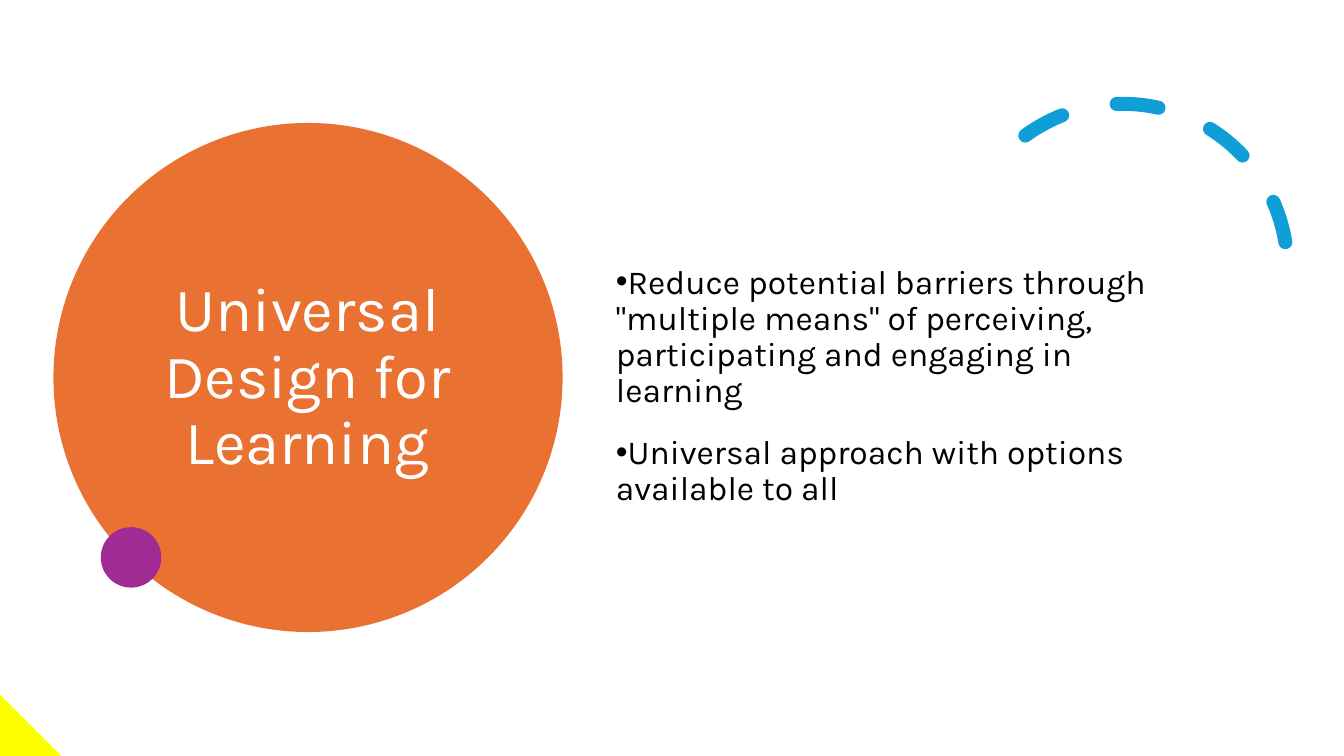
from lxml.etree import SubElement
from pptx import Presentation
from pptx.dml.color import RGBColor
from pptx.enum.dml import MSO_LINE
from pptx.enum.shapes import MSO_SHAPE
from pptx.enum.text import MSO_ANCHOR, MSO_AUTO_SIZE, PP_ALIGN
from pptx.oxml.ns import qn
from pptx.util import Emu, Pt

PX = 9144  # EMU per px, 100 px to the inch
FONT = "Karla"
TITLE_ONLY = 5
COLORS = {
    "orange": "E97132",
    "blue": "0F9ED5",
    "purple": "A02B93",
    "yellow": "FFFF00",
    "white": "FFFFFF",
    "black": "000000",
}
POINTS = [
    'Reduce potential barriers through "multiple means" of perceiving, '
    "participating and engaging in learning",
    "Universal approach with options available to all",
]


def px(length):
    return Emu(length * PX)


def color(name):
    return RGBColor.from_string(COLORS[name])


def add_filled_shape(slide, kind, left, top, size, fill):
    shape = slide.shapes.add_shape(kind, px(left), px(top), px(size), px(size))
    shape.shadow.inherit = False
    shape.fill.solid()
    shape.fill.fore_color.rgb = color(fill)
    shape.line.fill.background()
    return shape


def add_dashed_arc(slide, left, top, size, rotation, angles):
    arc = slide.shapes.add_shape(MSO_SHAPE.ARC, px(left), px(top), px(size), px(size))
    arc.shadow.inherit = False
    arc.rotation = rotation
    arc.adjustments[0], arc.adjustments[1] = angles
    arc.fill.background()
    arc.line.color.rgb = color("blue")
    arc.line.width = Pt(10)
    arc.line.dash_style = MSO_LINE.DASH
    arc.line._get_or_add_ln().set("cap", "rnd")


def add_bullet(paragraph, indent):
    properties = paragraph._p.get_or_add_pPr()
    properties.set("marL", "0")
    properties.set("indent", str(px(indent)))
    SubElement(properties, qn("a:buFont")).set("typeface", "Arial")
    SubElement(properties, qn("a:buChar")).set("char", "•")


def write_text(paragraph, text, *, size, fill, align=PP_ALIGN.LEFT, after=0):
    paragraph.alignment = align
    paragraph.line_spacing = 0.9
    paragraph.space_after = Pt(after)
    run = paragraph.add_run()
    run.text = text
    run.font.name = FONT
    run.font.size = Pt(size)
    run.font.color.rgb = color(fill)


def place_title(slide, text, left, top, width, height):
    title = slide.shapes.title
    title.left, title.top = px(left), px(top)
    title.width, title.height = px(width), px(height)
    frame = title.text_frame
    frame.word_wrap = True
    frame.auto_size = MSO_AUTO_SIZE.NONE
    frame.vertical_anchor = MSO_ANCHOR.MIDDLE
    write_text(frame.paragraphs[0], text, size=44, fill="white", align=PP_ALIGN.CENTER)
    return title


def add_bullet_list(slide, points, left, top, width, height):
    box = slide.shapes.add_textbox(px(left), px(top), px(width), px(height))
    frame = box.text_frame
    frame.word_wrap = True
    for number, point in enumerate(points):
        paragraph = frame.add_paragraph() if number else frame.paragraphs[0]
        after = 6 if number == len(points) - 1 else 18
        write_text(paragraph, point, size=24, fill="black", after=after)
        add_bullet(paragraph, indent=-25)


def main():
    presentation = Presentation()
    presentation.slide_width, presentation.slide_height = px(1333), px(750)
    slide = presentation.slides.add_slide(presentation.slide_layouts[TITLE_ONLY])

    title = place_title(slide, "Universal Design for Learning", 128, 153, 354, 445)
    circle = add_filled_shape(slide, MSO_SHAPE.OVAL, 53, 122, 505, "orange")
    title.element.addprevious(circle.element)  # keeps the circle behind the title
    add_dashed_arc(slide, 950, 103, 327, rotation=330.2, angles=(158.17, 17.81))
    add_filled_shape(slide, MSO_SHAPE.OVAL, 100, 523, 60, "purple")
    add_bullet_list(slide, POINTS, 601, 258, 605, 255)
    add_filled_shape(slide, MSO_SHAPE.RIGHT_TRIANGLE, 0, 689, 61, "yellow")

    presentation.save("out.pptx")


if __name__ == "__main__":
    main()
